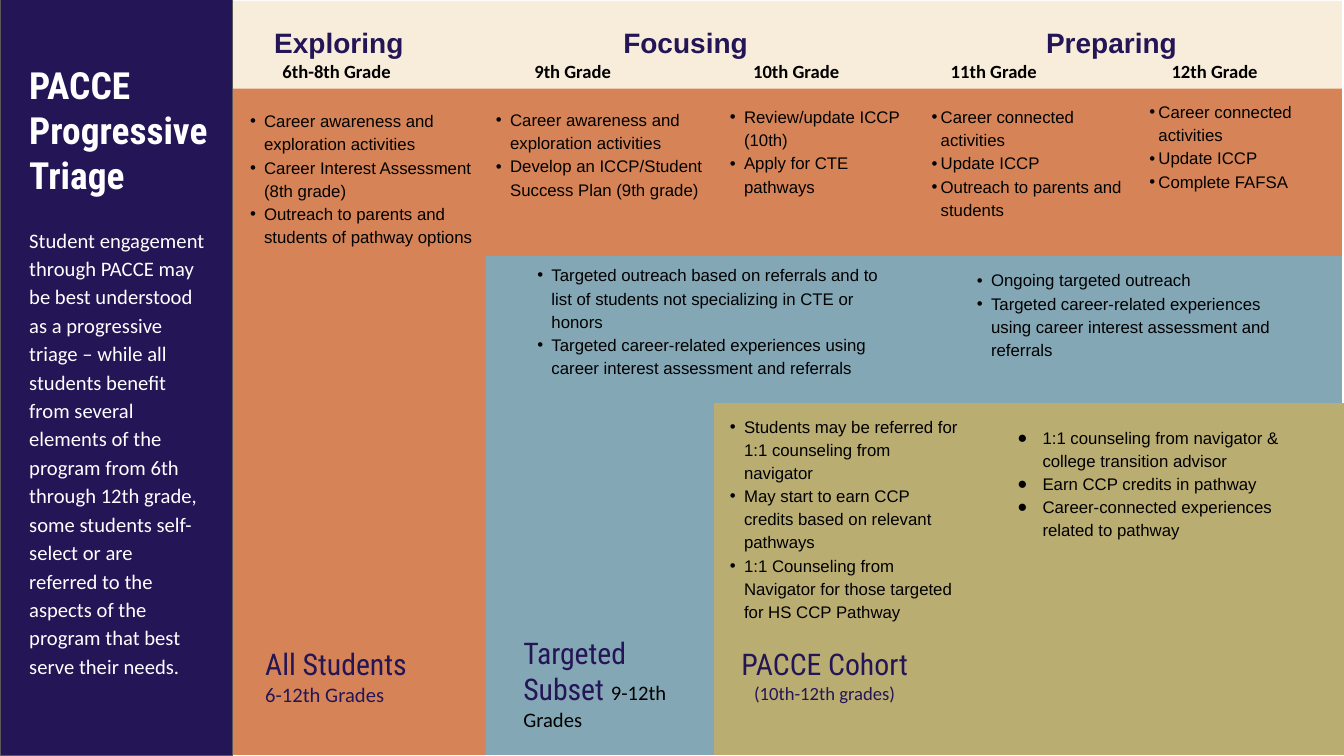
from lxml.etree import SubElement
from pptx import Presentation
from pptx.dml.color import RGBColor
from pptx.enum.shapes import MSO_SHAPE
from pptx.enum.text import PP_ALIGN
from pptx.oxml.ns import qn
from pptx.util import Inches, Pt

NAVY, CREAM, WHITE, BLACK = "231556", "F8EDDA", "FFFFFF", "000000"
ORANGE, BLUE, OLIVE, GRAY = "D68457", "84A7B6", "BAAD72", "595959"
HEADING_FONT, BODY_FONT, LIST_FONT = "Roboto Condensed", "Calibri", "Arial"
INSET = 0.13
WIDE_INDENT, TIGHT_INDENT, ROUND_INDENT = (0.3, -0.14), (0.09, -0.18), (0.33, -0.25)


def rgb(value):
    """Return the colour for a hex string."""
    return RGBColor.from_string(value)


def inside(box, left, top, width, height):
    """Return a box placed relative to the corner of another box."""
    return box[0] + left, box[1] + top, width, height


def add_panel(slide, box, fill, line=None):
    """Add a flat filled rectangle."""
    shape = slide.shapes.add_shape(MSO_SHAPE.RECTANGLE, *map(Inches, box))
    shape.shadow.inherit = False
    shape.fill.solid()
    shape.fill.fore_color.rgb = rgb(fill)
    if line:
        shape.line.color.rgb = rgb(line)
        shape.line.width = Pt(0.75)
    else:
        shape.line.fill.background()


def add_bullet(paragraph, character, indent):
    """Give a paragraph a bullet and a hanging indent."""
    properties = paragraph._p.get_or_add_pPr()
    properties.set("marL", str(Inches(indent[0])))
    properties.set("indent", str(Inches(indent[1])))
    color = SubElement(properties, qn("a:buClr"))
    SubElement(color, qn("a:srgbClr"), val=BLACK)
    SubElement(properties, qn("a:buFont"), typeface=LIST_FONT)
    SubElement(properties, qn("a:buChar"), char=character)


def add_run(paragraph, text, *, size, font, color, bold=False):
    """Add one formatted run to a paragraph."""
    run = paragraph.add_run()
    run.text = text
    run.font.size = Pt(size)
    run.font.name = font
    run.font.bold = bold
    run.font.color.rgb = rgb(color)


def add_text(slide, box, paragraphs, *, inset=INSET, align=PP_ALIGN.LEFT, spacing=None,
             after=None, bullet=None, indent=WIDE_INDENT, **style):
    """Add a text box; each paragraph is a string or a list of (text, style) runs."""
    frame = slide.shapes.add_textbox(*map(Inches, box)).text_frame
    frame.word_wrap = True
    frame.margin_left = frame.margin_right = Inches(inset)
    frame.margin_top = frame.margin_bottom = Inches(inset)
    for index, content in enumerate(paragraphs):
        paragraph = frame.add_paragraph() if index else frame.paragraphs[0]
        if bullet:
            add_bullet(paragraph, bullet, indent)
        paragraph.alignment = align
        if spacing:
            paragraph.line_spacing = spacing
        if after:
            paragraph.space_after = Pt(after)
        runs = [(content, style)] if isinstance(content, str) else content
        for text, run_style in runs:
            add_run(paragraph, text, **run_style)


def add_sidebar(slide, box, title, summary):
    """Draw the dark side panel with the title and summary."""
    add_panel(slide, box, NAVY, GRAY)
    add_text(slide, inside(box, 0.15, 0.49, 2.16, 1.52), [title],
             size=26.7, font=HEADING_FONT, color=WHITE, bold=True)
    add_text(slide, inside(box, 0.15, 2.09, 2.01, 4.84), [summary], spacing=1.15,
             after=13.3, size=14.7, font=BODY_FONT, color=WHITE)


def add_header(slide, box, stages, grades):
    """Draw the header band with stage names and grades."""
    add_panel(slide, box, CREAM)
    for name, left, width in stages:
        add_text(slide, inside(box, left, 0.11, width, 0.47), [name], inset=0,
                 align=PP_ALIGN.CENTER, spacing=1.4, size=20, font=LIST_FONT,
                 color=NAVY, bold=True)
    for name, left, align in grades:
        add_text(slide, inside(box, left, 0.47, 1.46, 0.35), [name], align=align,
                 size=13.3, font=BODY_FONT, color=BLACK, bold=True)


def add_tier(slide, box, fill, notes, label_place, label, align=PP_ALIGN.LEFT):
    """Draw one tier with its bulleted notes and its label."""
    add_panel(slide, box, fill, fill)
    for place, inset, bullet, indent, items in notes:
        add_text(slide, inside(box, *place), items, inset=inset, bullet=bullet,
                 indent=indent, spacing=1.15, size=12, font=LIST_FONT, color=BLACK)
    add_text(slide, inside(box, *label_place), label, align=align)


def label_runs(name, grades, size=14.7, color=NAVY):
    """Return the name run and the grades run of a tier label."""
    return [(name, dict(size=21.3, font=HEADING_FONT, color=NAVY)),
            (grades, dict(size=size, font=BODY_FONT, color=color))]


def main():
    """Build and save the slide."""
    presentation = Presentation()
    presentation.slide_width, presentation.slide_height = Inches(13.33), Inches(7.5)
    slide = presentation.slides.add_slide(presentation.slide_layouts[6])

    awareness = "Career awareness and exploration activities"
    connected = "Career connected activities"
    experiences = ("Targeted career-related experiences using career interest "
                   "assessment and referrals")

    add_tier(slide, (2.32, 0.12, 10.99, 7.37), ORANGE, [
        ((0, 0.95, 2.44, 1.39), 0, "•", WIDE_INDENT,
         [awareness, "Career Interest Assessment (8th grade)",
          "Outreach to parents and students of pathway options"]),
        ((2.44, 0.94, 2.44, 1.39), 0, "•", WIDE_INDENT,
         [awareness, "Develop an ICCP/Student Success Plan (9th grade)"]),
        ((4.63, 0.78, 2.33, 1.09), INSET, "•", WIDE_INDENT,
         ["Review/update ICCP (10th)", "Apply for CTE pathways"]),
        ((6.79, 0.78, 2.15, 1.62), INSET, "•", TIGHT_INDENT,
         [connected, "Update ICCP", "Outreach to parents and students"]),
        ((8.95, 0.73, 2.03, 1.62), INSET, "•", TIGHT_INDENT,
         [connected, "Update ICCP", "Complete FAFSA"]),
    ], (0.18, 6.16, 1.8, 0.87), [label_runs("All Students ", "6-12th Grades")])

    add_tier(slide, (4.83, 2.54, 8.48, 4.95), BLUE, [
        ((0.34, 0.06, 3.63, 1.44), 0, "•", WIDE_INDENT,
         ["Targeted outreach based on referrals and to list of students "
          "not specializing in CTE or honors", experiences]),
        ((4.7, 0.11, 3.26, 1.21), 0, "•", WIDE_INDENT,
         ["Ongoing targeted outreach", experiences]),
    ], (0.23, 3.63, 1.69, 1.09),
        [label_runs("Targeted Subset ", "9-12th Grades", color=BLACK)])

    name, grades = label_runs("PACCE Cohort", "(10th-12th grades)", size=13.3)
    add_tier(slide, (7.09, 4, 6.25, 3.49), OLIVE, [
        ((-0.01, 0.1, 2.47, 2.37), 0, "•", WIDE_INDENT,
         ["Students may be referred for 1:1 counseling from navigator",
          "May start to earn CCP credits based on relevant pathways",
          "1:1 Counseling from Navigator for those targeted for HS CCP Pathway"]),
        ((2.92, 0.21, 2.78, 1.16), 0, "●", ROUND_INDENT,
         ["1:1 counseling from navigator & college transition advisor",
          "Earn CCP credits in pathway",
          "Career-connected experiences related to pathway"]),
    ], (0.11, 2.28, 1.96, 0.76), [[name], [grades]], PP_ALIGN.CENTER)

    add_header(slide, (2.31, 0.01, 11, 0.87),
               [("Exploring ", 0.19, 1.8), ("Focusing", 3.55, 1.88),
                ("Preparing", 7.7, 2.03)],
               [("6th-8th Grade", 0.3, PP_ALIGN.CENTER),
                ("9th Grade", 2.86, PP_ALIGN.LEFT), ("10th Grade", 5.03, PP_ALIGN.LEFT),
                ("11th Grade", 6.99, PP_ALIGN.LEFT), ("12th Grade", 9.18, PP_ALIGN.LEFT)])

    add_sidebar(slide, (0.01, 0, 2.3, 7.5), "PACCE Progressive Triage",
                "Student engagement through PACCE may be best understood as a "
                "progressive triage – while all students benefit from several elements "
                "of the program from 6th through 12th grade, some students self-select "
                "or are referred to the aspects of the program that best serve their "
                "needs.")
    presentation.save("out.pptx")


if __name__ == "__main__":
    main()
